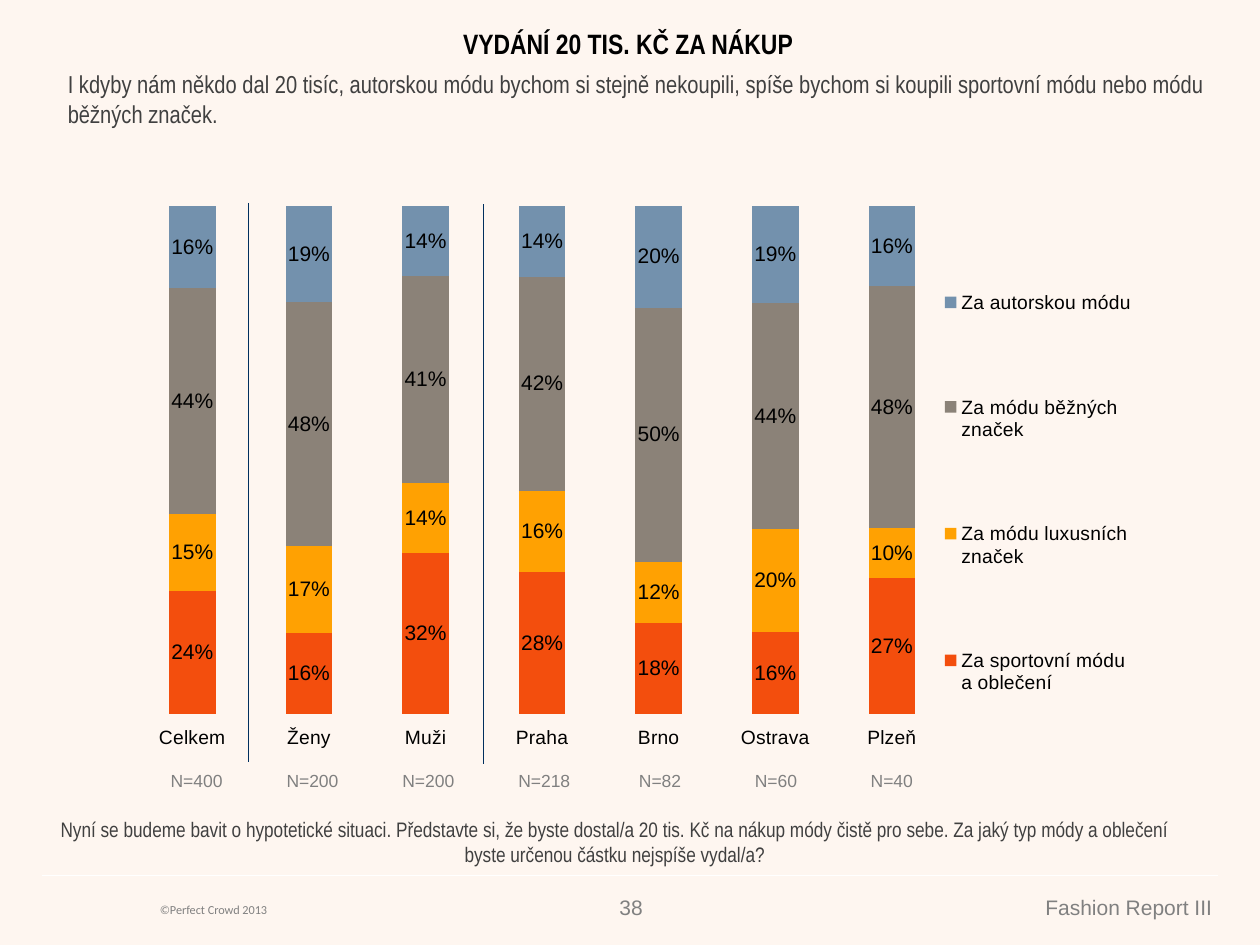
from lxml import etree
from pptx import Presentation
from pptx.chart.data import CategoryChartData
from pptx.dml.color import RGBColor
from pptx.enum.chart import (XL_CHART_TYPE, XL_LABEL_POSITION,
                             XL_LEGEND_POSITION, XL_TICK_LABEL_POSITION, XL_TICK_MARK)
from pptx.enum.shapes import MSO_CONNECTOR
from pptx.enum.text import MSO_ANCHOR, PP_ALIGN
from pptx.oxml import parse_xml
from pptx.oxml.ns import nsdecls, qn
from pptx.util import Inches, Pt

LEFT, CENTER, RIGHT = PP_ALIGN.LEFT, PP_ALIGN.CENTER, PP_ALIGN.RIGHT
MIDDLE = MSO_ANCHOR.MIDDLE
STRAIGHT = MSO_CONNECTOR.STRAIGHT

# Content
TITLE = "VYDÁNÍ 20 TIS. KČ ZA NÁKUP"
SUMMARY = ("I kdyby nám někdo dal 20 tisíc, autorskou módu bychom si stejně nekoupili, "
           "spíše bychom si koupili sportovní módu nebo módu běžných značek.")
QUESTION = ("Nyní se budeme bavit o hypotetické situaci. Představte si, že byste dostal/a "
            "20 tis. Kč na nákup módy čistě pro sebe. Za jaký typ módy a oblečení byste "
            "určenou částku nejspíše vydal/a?")
GROUPS = [("Celkem", 400), ("Ženy", 200), ("Muži", 200), ("Praha", 218),
          ("Brno", 82), ("Ostrava", 60), ("Plzeň", 40)]
SERIES = [
    ("Za sportovní módu a oblečení", "F34E0D", (24, 16, 32, 28, 18, 16, 27)),
    ("Za módu luxusních značek", "FFA102", (15, 17, 14, 16, 12, 20, 10)),
    ("Za módu běžných značek", "8B8278", (44, 48, 41, 42, 50, 44, 48)),
    ("Za autorskou módu", "7391AD", (16, 19, 14, 14, 20, 19, 16)),
]

THEME = {
    "bg": "FEF6F0", "black": "000000", "body": "404040", "muted": "808080",
    "divider": "002F5E", "rule": "FFFFFF",
    "sans": "Arial", "narrow": "Arial Narrow", "small": "Calibri",
    "title": 16, "summary": 14, "text": 12, "axis": 11, "count": 10, "copyright": 7,
}

# Text boxes: text, (left, top, width, height), font, size, colour, alignment, bold
TEXTS = [
    ("©Perfect Crowd 2013", (1.17, 7.11, 2.91, 0.22), "small", "copyright", "muted", LEFT, False),
    ("Fashion Report III", (6.01, 7.05, 3.71, 0.3), "sans", "text", "muted", RIGHT, False),
    ("38", (4.79, 7.05, 0.41, 0.3), "sans", "text", "muted", RIGHT, False),
    (TITLE, (0.56, 0.16, 8.85, 0.37), "narrow", "title", "black", CENTER, True),
    (SUMMARY, (0.44, 0.5, 9.36, 0.89), "narrow", "summary", "body", LEFT, False),
    (QUESTION, (0.35, 6.43, 9.06, 0.5), "narrow", "text", "body", CENTER, False),
]

# Lines: x1, y1, x2, y2, colour
FOOTER_RULE = (0.33, 6.95, 9.67, 6.95, "rule")
DIVIDERS = [(1.97, 1.61, 1.97, 6.05, "divider"), (3.84, 1.62, 3.84, 6.06, "divider")]

CHART_BOX = (0.9, 1.36, 8.2, 5)
PLOT = (0.02, 0.055, 0.79, 0.807)
LEGEND = (0.8, 0.06, 0.19, 0.9)
COUNTS_LEFT, COUNTS_TOP, COUNT_W, COUNT_H = 1.1, 6.09, 0.92, 0.21


def rgb(name):
    return RGBColor.from_string(THEME.get(name, name))


def set_font(font, face, size, color, bold=False):
    font.name, font.size, font.bold = THEME[face], Pt(THEME[size]), bold
    font.color.rgb = rgb(color)


def add_text(s, text, box, face, size, color, align, bold):
    tf = s.shapes.add_textbox(*map(Inches, box)).text_frame
    tf.word_wrap = True
    p = tf.paragraphs[0]
    p.text, p.alignment = text, align
    set_font(p.font, face, size, color, bold)


def add_line(s, x1, y1, x2, y2, color):
    line = s.shapes.add_connector(STRAIGHT, *map(Inches, (x1, y1, x2, y2)))
    line.line.color.rgb = rgb(color)
    line.line.width = Pt(0.75)
    etree.SubElement(line._element.spPr, qn("a:effectLst"))


def manual_layout(box, inner=False):
    target = '<c:layoutTarget val="inner"/>' if inner else ""
    modes = "".join(f'<c:{k}Mode val="edge"/>' for k in "xy")
    sizes = "".join(f'<c:{k} val="{v}"/>' for k, v in zip("xywh", box))
    return parse_xml(f'<c:layout {nsdecls("c")}><c:manualLayout>{target}{modes}{sizes}'
                     '</c:manualLayout></c:layout>')


def add_spending_chart(s):
    data = CategoryChartData(number_format="0")
    data.categories = [name for name, _ in GROUPS]
    for name, _, values in SERIES:
        data.add_series(name, values)
    chart = s.shapes.add_chart(XL_CHART_TYPE.COLUMN_STACKED_100,
                               *map(Inches, CHART_BOX), data).chart
    chart.has_title = False
    set_font(chart.font, "sans", "text", "black")

    # Axes
    axis = chart.category_axis
    axis.tick_label_position = XL_TICK_LABEL_POSITION.LOW
    axis.major_tick_mark = XL_TICK_MARK.OUTSIDE
    axis.format.line.fill.background()
    set_font(axis.tick_labels.font, "sans", "axis", "black")
    chart.value_axis.visible = False
    chart.value_axis.has_major_gridlines = False

    # Columns and labels
    plot = chart.plots[0]
    plot.gap_width, plot.overlap, plot.vary_by_categories = 150, 100, False
    for series, (_, color, _) in zip(plot.series, SERIES):
        series.format.fill.solid()
        series.format.fill.fore_color.rgb = rgb(color)
        labels = series.data_labels
        labels.show_value = True
        labels.position = XL_LABEL_POSITION.CENTER
        labels.number_format, labels.number_format_is_linked = '#,##0"%"', False
        set_font(labels.font, "sans", "text", "black")

    # Legend and plot placement
    chart.has_legend = True
    legend = chart.legend
    legend.position, legend.include_in_layout = XL_LEGEND_POSITION.RIGHT, False
    set_font(legend.font, "sans", "axis", "black")
    area = chart._chartSpace.chart.plotArea
    for parent, layout in ((area, manual_layout(PLOT, True)),
                           (legend._element, manual_layout(LEGEND))):
        for old in parent.findall(qn("c:layout")):
            parent.remove(old)
        parent.insert(0 if parent is area else 1, layout)


def add_counts(s):
    n = len(GROUPS)
    table = s.shapes.add_table(1, n, Inches(COUNTS_LEFT), Inches(COUNTS_TOP),
                               Inches(COUNT_W * n), Inches(COUNT_H)).table
    table.first_row = table.horz_banding = False
    # "No Style, No Grid"
    style = table._tbl.tblPr.find(qn("a:tableStyleId"))
    style.text = "{2D5ABB26-0587-4C30-8999-92F81FD0307C}"
    for cell, (_, count) in zip(table.rows[0].cells, GROUPS):
        cell.fill.background()
        cell.vertical_anchor = MIDDLE
        cell.margin_left = cell.margin_right = cell.margin_top = Inches(0.01)
        cell.margin_bottom = 0
        p = cell.text_frame.paragraphs[0]
        p.text, p.alignment = f"N={count}", CENTER
        set_font(p.font, "sans", "count", "muted")


def main():
    prs = Presentation()
    prs.slide_width, prs.slide_height = Inches(10), Inches(7.5)
    s = prs.slides.add_slide(prs.slide_layouts[6])
    s.background.fill.solid()
    s.background.fill.fore_color.rgb = rgb("bg")

    add_line(s, *FOOTER_RULE)
    add_spending_chart(s)
    for divider in DIVIDERS:
        add_line(s, *divider)
    add_counts(s)
    for item in TEXTS:
        add_text(s, *item)
    prs.save("out.pptx")


if __name__ == "__main__":
    main()
